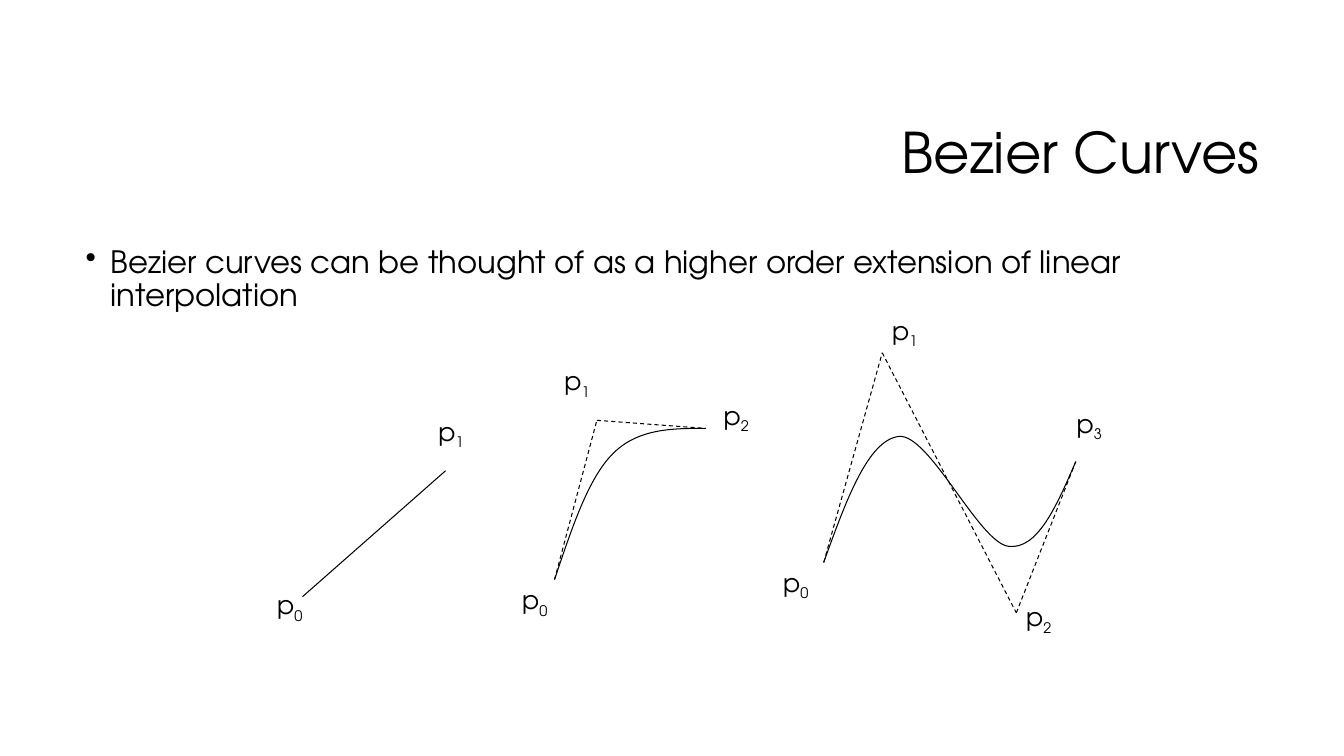
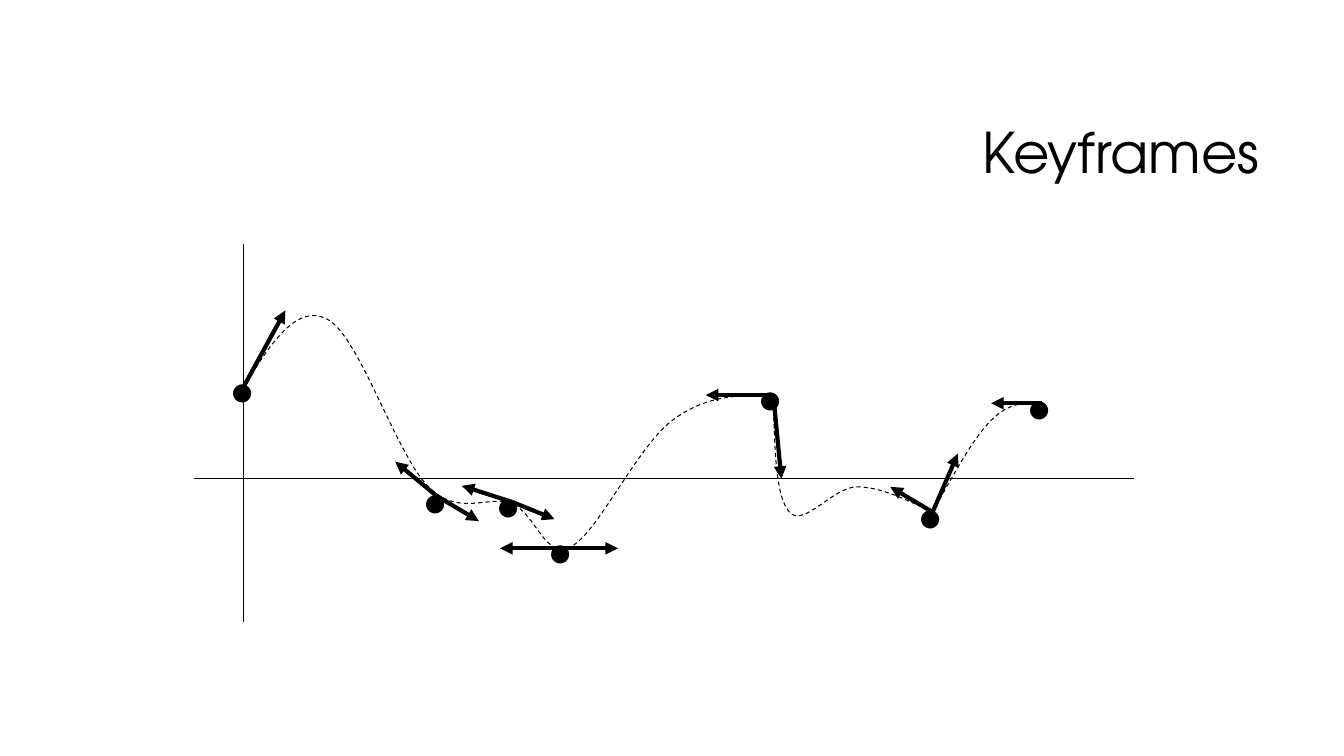
from dataclasses import dataclass

from lxml import etree
from pptx import Presentation
from pptx import util as u
from pptx.dml.color import RGBColor
from pptx.enum import dml, shapes, text
from pptx.oxml.ns import qn
from pptx.shapes.base import BaseShape
from pptx.slide import Slide
from pptx.text.text import _Paragraph as Paragraph

EMU_PER_PX = 9144  # 100 px to the inch
INK = RGBColor(0x00, 0x00, 0x00)
FONT = "TeX Gyre Adventor"
THIN, THICK = 0.75, 3

Point = tuple[int, int]


@dataclass(frozen=True)
class Box:
    left: int
    top: int
    width: int
    height: int


@dataclass(frozen=True)
class Figure:
    """A Bezier curve with its control points and where their labels start."""
    controls: list[Point]
    labels: list[Point]
    curve: list[Point]


@dataclass(frozen=True)
class Keyframe:
    at: Point
    dot: Point
    tangents: list[Point]


TITLE = Box(317, 84, 942, 141)
BODY = Box(75, 240, 1183, 440)
LABEL_SIZE = (47, 40)
DOT_SIZE = (51, 71)

FIGURES = [
    Figure([(300, 592), (442, 467)], [(265, 580), (425, 408)], []),
    Figure(
        [(550, 575), (592, 417), (700, 425)],
        [(508, 575), (550, 358), (708, 392)],
        [(550, 575), (567, 525), (583, 475), (608, 450),
         (633, 425), (667, 425), (700, 425)],
    ),
    Figure(
        [(817, 558), (875, 350), (1008, 608), (1067, 458)],
        [(767, 558), (875, 308), (1008, 592), (1058, 400)],
        [(817, 558), (839, 497), (861, 436), (892, 433), (922, 431),
         (971, 538), (1000, 542), (1029, 546), (1048, 502), (1067, 458)],
    ),
]

MOTION_CURVES = [
    [(242, 383), (268, 342), (294, 300), (325, 317), (356, 333), (394, 453),
     (425, 483), (456, 514), (485, 490), (508, 500), (532, 510), (540, 556),
     (567, 542), (593, 528), (633, 442), (667, 417), (700, 392), (733, 392),
     (767, 392)],
    [(767, 392), (768, 442), (769, 493), (783, 508), (797, 524), (826, 483),
     (850, 483), (874, 483), (899, 496), (925, 508)],
    [(925, 508), (945, 472), (965, 435), (983, 417), (1001, 399), (1017, 399),
     (1033, 400)],
]
AXES = [((192, 475), (1125, 475)), ((242, 242), (242, 617))]
KEYFRAMES = [
    Keyframe((242, 383), (218, 348), [(283, 308)]),
    Keyframe((433, 492), (409, 458), [(392, 458), (475, 517)]),
    Keyframe((508, 498), (482, 462), [(458, 482), (550, 515)]),
    Keyframe((554, 544), (533, 508), [(496, 544), (613, 544)]),
    Keyframe((767, 392), (741, 356), [(700, 392), (775, 475)]),
    Keyframe((925, 508), (900, 473), [(950, 450), (883, 483)]),
    Keyframe((1033, 400), (1008, 365), [(983, 400)]),
]


def px(length: int) -> u.Emu:
    return u.Emu(length * EMU_PER_PX)


def add_span(para: Paragraph, words: str, size: int, subscript: bool = False) -> None:
    span = para.add_run()
    span.text = words
    span.font.name = FONT
    span.font.size = u.Pt(size)
    span.font.color.rgb = INK
    if subscript:
        span.font._element.set("baseline", "-25000")


def add_text_box(page: Slide, box: Box, wrap: bool = True) -> BaseShape:
    holder = page.shapes.add_textbox(
        px(box.left), px(box.top), px(box.width), px(box.height))
    holder.text_frame.word_wrap = wrap
    if not wrap:
        holder.text_frame.auto_size = text.MSO_AUTO_SIZE.SHAPE_TO_FIT_TEXT
    return holder


def add_page(deck: Presentation, title: str) -> Slide:
    page = deck.slides.add_slide(deck.slide_layouts[6])
    frame = add_text_box(page, TITLE).text_frame
    frame.vertical_anchor = text.MSO_ANCHOR.MIDDLE
    para = frame.paragraphs[0]
    para.alignment = text.PP_ALIGN.RIGHT
    para.line_spacing = 0.9
    add_span(para, title, 40)
    return page


def add_bullet(page: Slide, words: str) -> None:
    para = add_text_box(page, BODY).text_frame.paragraphs[0]
    para.line_spacing = 0.9
    properties = para._p.get_or_add_pPr()
    properties.set("marL", str(px(25)))
    properties.set("indent", str(px(-25)))
    etree.SubElement(properties, qn("a:buChar"), char="•")
    add_span(para, words, 22)


def add_label(page: Slide, at: Point, index: int) -> None:
    """Write a point's name, p with its index below the line."""
    para = add_text_box(page, Box(*at, *LABEL_SIZE), False).text_frame.paragraphs[0]
    add_span(para, "p", 18)
    add_span(para, str(index), 18, subscript=True)


def add_dot(page: Slide, at: Point) -> None:
    holder = add_text_box(page, Box(*at, *DOT_SIZE), False)
    add_span(holder.text_frame.paragraphs[0], "•", 36)


def style_line(shape: BaseShape, width: float, dashed: bool) -> None:
    shape.line.color.rgb = INK
    shape.line.width = u.Pt(width)
    if dashed:
        shape.line.dash_style = dml.MSO_LINE.DASH


def add_line(page: Slide, start: Point, end: Point, width: float = THIN,
             dashed: bool = False, arrow: bool = False) -> None:
    line = page.shapes.add_connector(
        shapes.MSO_CONNECTOR.STRAIGHT, *map(px, (*start, *end)))
    style_line(line, width, dashed)
    properties = line.element.spPr
    if arrow:
        etree.SubElement(properties.find(qn("a:ln")), qn("a:tailEnd"), type="triangle")
    etree.SubElement(properties, qn("a:effectLst"))


def add_curve(page: Slide, points: list[Point], dashed: bool = False) -> None:
    """Draw cubic Beziers: a start, then two controls and an end for each."""
    builder = page.shapes.build_freeform(*points[0], scale=EMU_PER_PX)
    builder.add_line_segments(points[1:], close=False)
    curve = builder.convert_to_shape()
    curve.shadow.inherit = False
    curve.fill.background()
    style_line(curve, THIN, dashed)
    outline = next(curve.element.iter(qn("a:path")))
    segments = outline.findall(qn("a:lnTo"))
    for first in range(0, len(segments), 3):
        cubic = etree.SubElement(outline, qn("a:cubicBezTo"))
        for segment in segments[first:first + 3]:
            cubic.append(segment[0])
            outline.remove(segment)


def build_bezier_page(deck: Presentation) -> None:
    page = add_page(deck, "Bezier Curves")
    add_bullet(page, "Bezier curves can be thought of as a higher order "
                     "extension of linear interpolation")
    for figure in FIGURES:
        if figure.curve:
            add_curve(page, figure.curve)
        for start, end in zip(figure.controls, figure.controls[1:]):
            add_line(page, start, end, dashed=bool(figure.curve))
        for index, at in enumerate(figure.labels):
            add_label(page, at, index)


def build_keyframes_page(deck: Presentation) -> None:
    page = add_page(deck, "Keyframes")
    for points in MOTION_CURVES:
        add_curve(page, points, dashed=True)
    for start, end in AXES:
        add_line(page, start, end)
    for key in KEYFRAMES:
        for tip in key.tangents:
            add_line(page, key.at, tip, THICK, arrow=True)
        add_dot(page, key.dot)


def main() -> None:
    deck = Presentation()
    deck.slide_width, deck.slide_height = px(1333), px(750)
    build_bezier_page(deck)
    build_keyframes_page(deck)
    deck.save("out.pptx")


if __name__ == "__main__":
    main()
